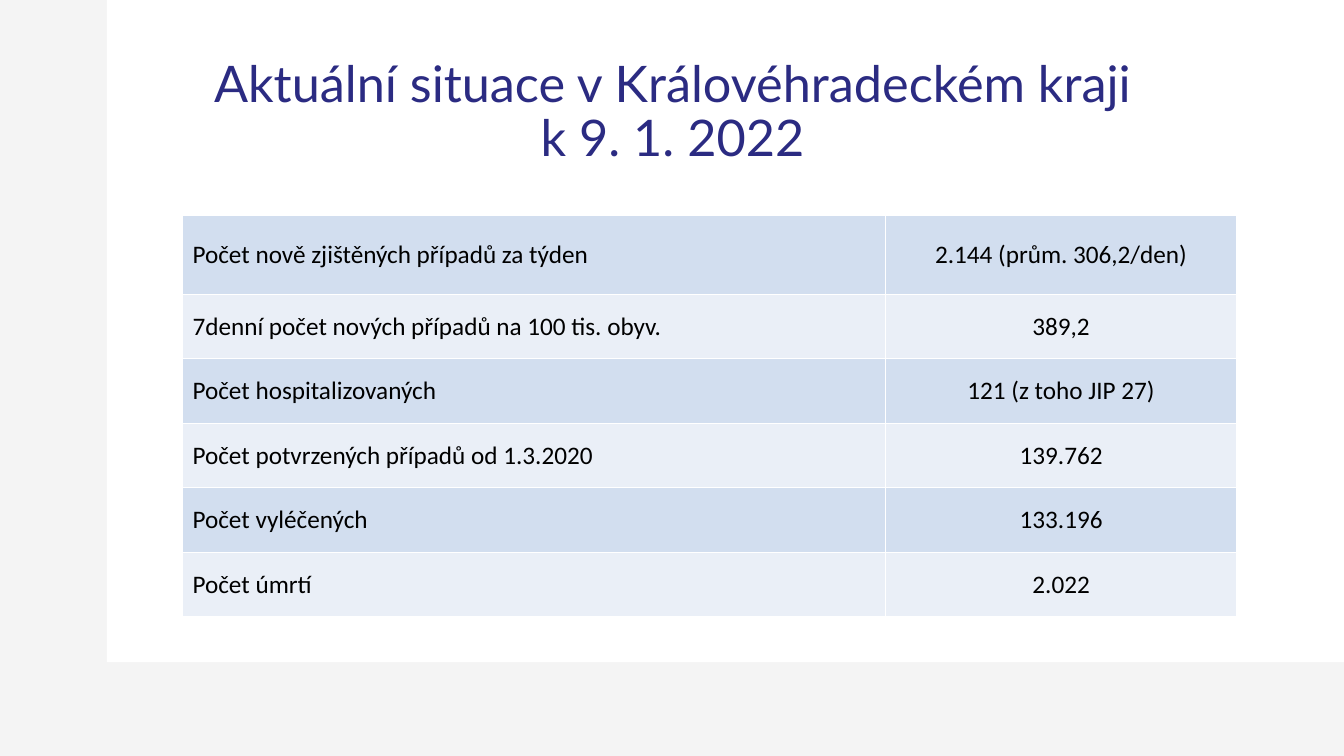
from dataclasses import dataclass

from lxml import etree
from pptx import Presentation
from pptx.dml.color import RGBColor
from pptx.enum.shapes import MSO_SHAPE as Shape
from pptx.enum.text import MSO_ANCHOR as Anchor, PP_ALIGN as Align
from pptx.oxml.ns import qn
from pptx.util import Inches, Pt


@dataclass(frozen=True)
class Theme:
    backdrop: str = "F4F4F4"
    white: str = "FFFFFF"
    title: str = "2B2B82"
    body: str = "000000"
    bands: tuple = ("D2DEEF", "EAEFF7")
    title_font: str = "Lato"
    body_font: str = "Calibri"
    title_size: int = 36
    body_size: int = 18
    border_width: int = 1


theme = Theme()


def write_text(frame, text, *, font, size, color, align=Align.LEFT, spacing=1.0):
    paragraph = frame.paragraphs[0]
    paragraph.text = text
    paragraph.alignment = align
    paragraph.line_spacing = spacing
    for run in paragraph.runs:
        run.font.name = font
        run.font.size = Pt(size)
        run.font.color.rgb = RGBColor.from_string(color)


def add_borders(cell, color, width):
    properties = cell._tc.get_or_add_tcPr()
    for position, side in enumerate(("lnL", "lnR", "lnT", "lnB")):
        line = etree.Element(qn(f"a:{side}"), w=str(Pt(width)))
        fill = etree.SubElement(line, qn("a:solidFill"))
        etree.SubElement(fill, qn("a:srgbClr"), val=color)
        properties.insert(position, line)


presentation = Presentation()
presentation.slide_width = Inches(13.33)
presentation.slide_height = Inches(7.5)
slide = presentation.slides.add_slide(presentation.slide_layouts[6])
slide.background.fill.solid()
slide.background.fill.fore_color.rgb = RGBColor.from_string(theme.backdrop)

panel = slide.shapes.add_shape(
    Shape.RECTANGLE, Inches(1.06), Inches(0), Inches(12.27), Inches(6.57)
)
panel.shadow.inherit = False
panel.fill.solid()
panel.fill.fore_color.rgb = RGBColor.from_string(theme.white)
panel.line.fill.background()

title = slide.shapes.add_textbox(Inches(0.92), Inches(0.4), Inches(11.5), Inches(1.45))
title.text_frame.word_wrap = True
title.text_frame.vertical_anchor = Anchor.MIDDLE
write_text(
    title.text_frame,
    "Aktuální situace v Královéhradeckém kraji\nk 9. 1. 2022",
    font=theme.title_font,
    size=theme.title_size,
    color=theme.title,
    align=Align.CENTER,
    spacing=0.9,
)

statistics = [
    ("Počet nově zjištěných případů za týden", "2.144 (prům. 306,2/den)"),
    ("7denní počet nových případů na 100 tis. obyv.", "389,2"),
    ("Počet hospitalizovaných", "121 (z toho JIP 27)"),
    ("Počet potvrzených případů od 1.3.2020", "139.762"),
    ("Počet vyléčených", "133.196"),
    ("Počet úmrtí", "2.022"),
]
column_widths = (6.97, 3.49)
column_alignments = (Align.LEFT, Align.CENTER)
row_heights = [0.78] + [0.64] * (len(statistics) - 1)

table = slide.shapes.add_table(
    len(statistics),
    len(column_widths),
    Inches(1.81),
    Inches(2.14),
    Inches(sum(column_widths)),
    Inches(sum(row_heights)),
).table
table.first_row = False
table.horz_banding = False
for column, width in zip(table.columns, column_widths):
    column.width = Inches(width)

for row_index, (values, height) in enumerate(zip(statistics, row_heights)):
    table.rows[row_index].height = Inches(height)
    for column_index, (value, align) in enumerate(zip(values, column_alignments)):
        cell = table.cell(row_index, column_index)
        cell.vertical_anchor = Anchor.MIDDLE
        cell.fill.solid()
        cell.fill.fore_color.rgb = RGBColor.from_string(theme.bands[row_index % 2])
        add_borders(cell, theme.white, theme.border_width)
        write_text(
            cell.text_frame,
            value,
            font=theme.body_font,
            size=theme.body_size,
            color=theme.body,
            align=align,
        )

presentation.save("out.pptx")
